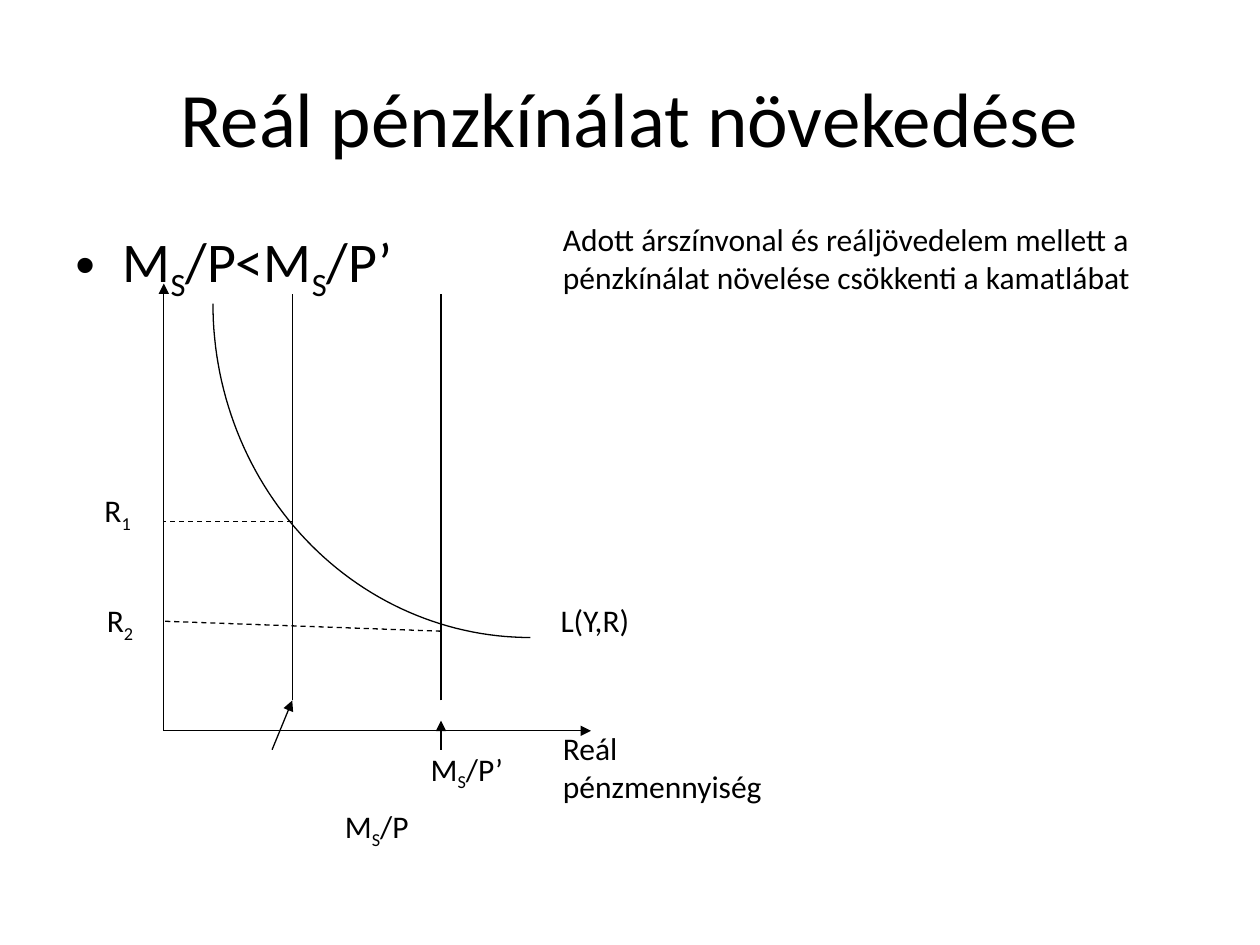
import math

from lxml import etree
from pptx import Presentation
from pptx import util as u
from pptx.dml.color import RGBColor
from pptx.enum import dml, shapes, text
from pptx.oxml.ns import qn

Pt = u.Pt
BLACK = RGBColor(0, 0, 0)
FONT = "Calibri"

# Diagram grid, in points
AXIS_X, AXIS_Y = 93.6, 417.6
SUPPLY_1, SUPPLY_2 = 167.04, 252
SUPPLY_TOP, SUPPLY_BOTTOM = 167.8, 400.3


def add_text(slide, box, parts, size=18, wrap=True, **formats):
    """Add one paragraph; a part that starts with "_" is a subscript."""
    sp = slide.shapes.add_textbox(*map(Pt, box))
    tf = sp.text_frame
    tf.word_wrap = wrap
    p = tf.paragraphs[0]
    for name, value in formats.items():
        setattr(tf if name == "vertical_anchor" else p, name, value)
    for part in parts:
        r = p.add_run()
        r.text = part.lstrip("_")
        for name, value in {"name": FONT, "size": Pt(size)}.items():
            setattr(r.font, name, value)
        r.font.color.rgb = BLACK
        if part.startswith("_"):
            r.font._element.set("baseline", "-25000")
    return p


def add_bullet(p, indent):
    pPr = p._p.get_or_add_pPr()
    pPr.set("marL", str(Pt(indent)))
    pPr.set("indent", str(-Pt(indent)))
    etree.SubElement(pPr, qn("a:buFont")).set("typeface", "Arial")
    etree.SubElement(pPr, qn("a:buChar")).set("char", "•")


def style_line(line):
    line.color.rgb = BLACK
    line.width = Pt(0.75)


def add_line(slide, start, end, arrow=False, dashed=False):
    sp = slide.shapes.add_connector(
        shapes.MSO_CONNECTOR.STRAIGHT, *map(Pt, (*start, *end)))
    style_line(sp.line)
    if dashed:
        sp.line.dash_style = dml.MSO_LINE.DASH
    if arrow:
        tail = etree.SubElement(sp.line._get_or_add_ln(), qn("a:tailEnd"))
        tail.set("type", "triangle")
    etree.SubElement(sp._element.spPr, qn("a:effectLst"))


def add_quarter_curve(slide, center, rx, ry, steps=60):
    """Draw the lower left quarter of an ellipse."""
    cx, cy = center
    angles = [math.pi / 2 * (1 + i / steps) for i in range(steps + 1)]
    points = [(Pt(cx + rx * math.cos(a)), Pt(cy + ry * math.sin(a)))
              for a in angles]
    builder = slide.shapes.build_freeform(*points[0])
    builder.add_line_segments(points[1:], close=False)
    sp = builder.convert_to_shape()
    sp.shadow.inherit = False
    sp.fill.background()
    style_line(sp.line)


def main():
    prs = Presentation()
    prs.slide_width, prs.slide_height = Pt(720), Pt(540)
    slide = prs.slides.add_slide(prs.slide_layouts[6])

    # Title and bullet
    add_text(slide, (36, 21.6, 648, 90), ["Reál pénzkínálat növekedése"], 44,
             alignment=text.PP_ALIGN.CENTER,
             vertical_anchor=text.MSO_ANCHOR.MIDDLE)
    p = add_text(slide, (36, 126, 648, 356.4),
                 ["M", "_S", "/P<M", "_S", "/P’"], 32, space_before=Pt(6.4))
    add_bullet(p, 27)

    # Axes
    add_line(slide, (AXIS_X, AXIS_Y), (AXIS_X, 162), arrow=True)
    add_line(slide, (AXIS_X, AXIS_Y), (337.7, AXIS_Y), arrow=True)

    # Money supply lines and demand curve
    for x in (SUPPLY_1, SUPPLY_2):
        add_line(slide, (x, SUPPLY_BOTTOM), (x, SUPPLY_TOP))
    add_quarter_curve(slide, (303.1, 173.5), 181.4, 190.8)

    # Interest rate levels
    add_line(slide, (SUPPLY_1, 298.1), (AXIS_X, 298.1), dashed=True)
    add_line(slide, (SUPPLY_2, 360.7), (AXIS_X, 355), dashed=True)

    # Pointers to the supply lines
    add_line(slide, (155.5, 428.4), (SUPPLY_1, SUPPLY_BOTTOM), arrow=True)
    add_line(slide, (SUPPLY_2, 428.4), (SUPPLY_2, 411.8), arrow=True)

    # Labels
    for box, parts, wrap in (
        ((313.2, 339.8, 66.2, 28.8), ["L(Y,R)"], False),
        ((190, 457.6, 62.6, 28.8), ["M", "_S", "/P"], True),
        ((239, 424.8, 58.3, 28.8), ["M", "_S", "/P’"], False),
        ((52.6, 277.2, 33.8, 28.8), ["R", "_1"], False),
        ((54, 339.8, 52.6, 28.8), ["R", "_2"], True),
        ((314.6, 413.3, 141.8, 50.4), ["Reál pénzmennyiség"], True),
        ((314.6, 122.4, 405.4, 50.4),
         ["Adott árszínvonal és reáljövedelem mellett a "
          "pénzkínálat növelése csökkenti a kamatlábat"], True),
    ):
        add_text(slide, box, parts, wrap=wrap)

    prs.save("out.pptx")


if __name__ == "__main__":
    main()
